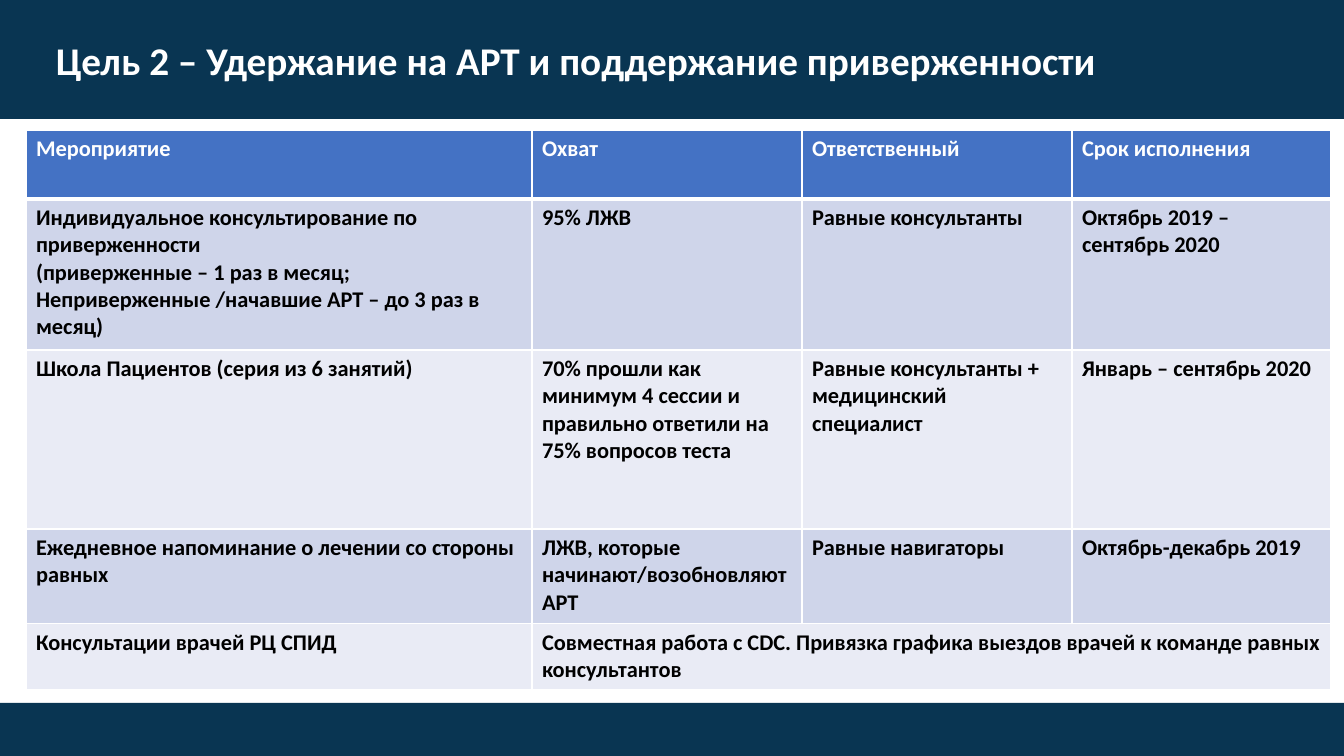
from lxml import etree
from pptx import Presentation
from pptx.dml.color import RGBColor
from pptx.enum import shapes, text
from pptx.oxml import ns
from pptx import util as u

TITLE = "Цель 2 – Удержание на АРТ и поддержание приверженности"
HEADER = ["Мероприятие", "Охват", "Ответственный", "Срок исполнения"]
ACTIVITIES = [
    ["Индивидуальное консультирование по приверженности\v(приверженные – 1 раз в месяц;\n"
     "Неприверженные /начавшие АРТ – до 3 раз в месяц)",
     "95% ЛЖВ", "Равные консультанты", "Октябрь 2019 – сентябрь 2020"],
    ["Школа Пациентов (серия из 6 занятий)",
     "70% прошли как минимум 4 сессии и правильно ответили на 75% вопросов теста",
     "Равные консультанты + медицинский специалист", "Январь – сентябрь 2020"],
    ["Ежедневное напоминание о лечении со стороны равных",
     "ЛЖВ, которые начинают/возобновляют АРТ",
     "Равные навигаторы", "Октябрь-декабрь 2019"],
    ["Консультации врачей РЦ СПИД",
     "Совместная работа с CDC. Привязка графика выездов врачей к команде равных консультантов"],
]

THEME = {
    "font": "Calibri", "title_size": 28, "table_size": 16,
    "band": "093552", "header": "4472C4", "rows": ["CFD5EA", "E9EBF5"],
    "light": "FFFFFF", "dark": "000000",
}
SLIDE_W, SLIDE_H = 1344, 756
BANDS = [(0, 119), (703, 53)]
TITLE_BOX = (46, 31, 1114, 57)
TABLE_LEFT, TABLE_TOP = 26, 130
COLUMNS = [506, 270, 270, 259]
ROWS = [69, 151, 179, 95, 66]


def px(length):
    return u.Emu(round(length * 914400 / 100.8))


def style_text(frame, size, color):
    look = {"name": THEME["font"], "size": u.Pt(size), "bold": True}
    for paragraph in frame.paragraphs:
        for run in paragraph.runs:
            for key, value in look.items():
                setattr(run.font, key, value)
            run.font.color.rgb = RGBColor.from_string(color)


def add_borders(cell, bottom):
    widths = {"a:lnL": 1, "a:lnR": 1, "a:lnT": 1, "a:lnB": bottom}
    properties = cell._tc.get_or_add_tcPr()
    for tag, width in widths.items():
        border = etree.SubElement(properties, ns.qn(tag), w=str(u.Pt(width)))
        fill = etree.SubElement(border, ns.qn("a:solidFill"))
        etree.SubElement(fill, ns.qn("a:srgbClr"), val=THEME["light"])


def add_bands(slide):
    for top, height in BANDS:
        band = slide.shapes.add_shape(
            shapes.MSO_SHAPE.RECTANGLE, 0, px(top), px(SLIDE_W), px(height))
        band.shadow.inherit = False
        band.fill.solid()
        band.fill.fore_color.rgb = RGBColor.from_string(THEME["band"])
        band.line.fill.background()


def add_title(slide):
    title = slide.shapes.add_textbox(*map(px, TITLE_BOX)).text_frame
    title.text = TITLE
    title.word_wrap = True
    title.auto_size = text.MSO_AUTO_SIZE.SHAPE_TO_FIT_TEXT
    style_text(title, THEME["title_size"], THEME["light"])


def add_plan(slide):
    plan = slide.shapes.add_table(
        len(ROWS), len(COLUMNS), px(TABLE_LEFT), px(TABLE_TOP),
        px(sum(COLUMNS)), px(sum(ROWS))).table
    for column, width in zip(plan.columns, COLUMNS):
        column.width = px(width)
    for row, height in zip(plan.rows, ROWS):
        row.height = px(height)
    for r, entries in enumerate([HEADER] + ACTIVITIES):
        is_header = r == 0
        fill = THEME["header"] if is_header else THEME["rows"][(r - 1) % 2]
        for c in range(len(COLUMNS)):
            cell = plan.cell(r, c)
            add_borders(cell, 3 if is_header else 1)
            cell.fill.solid()
            cell.fill.fore_color.rgb = RGBColor.from_string(fill)
            if c < len(entries):
                cell.text = entries[c]
                style_text(cell.text_frame, THEME["table_size"],
                           THEME["light"] if is_header else THEME["dark"])
        if len(entries) < len(COLUMNS):
            plan.cell(r, len(entries) - 1).merge(plan.cell(r, len(COLUMNS) - 1))


def main():
    deck = Presentation()
    deck.slide_width, deck.slide_height = px(SLIDE_W), px(SLIDE_H)
    slide = deck.slides.add_slide(deck.slide_layouts[6])
    add_bands(slide)
    add_plan(slide)
    add_title(slide)
    deck.save("out.pptx")


if __name__ == "__main__":
    main()
